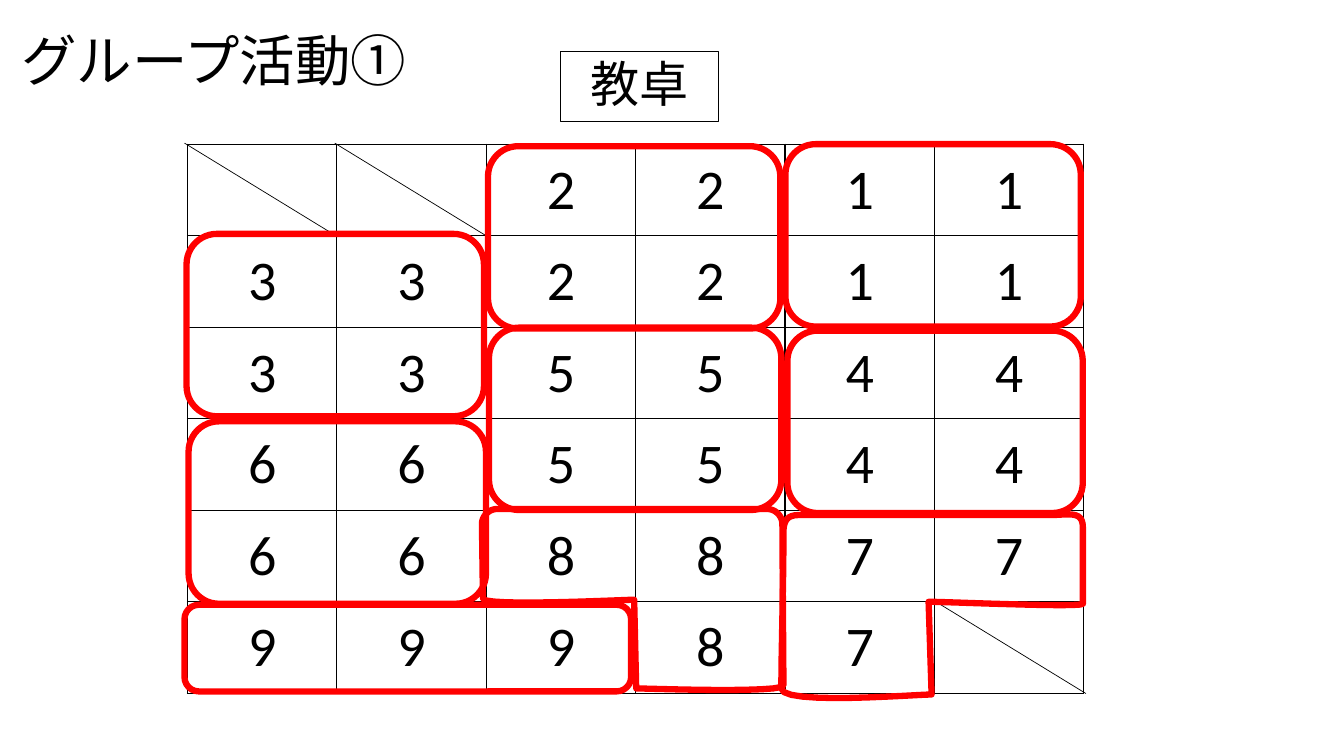
from dataclasses import dataclass

from lxml import etree
from pptx import Presentation
from pptx.dml.color import RGBColor
from pptx.enum.shapes import MSO_CONNECTOR, MSO_SHAPE
from pptx.enum.text import MSO_ANCHOR, MSO_AUTO_SIZE, PP_ALIGN
from pptx.oxml.ns import qn
from pptx.util import Inches, Pt

RECTANGLE = MSO_SHAPE.RECTANGLE
ROUNDED = MSO_SHAPE.ROUNDED_RECTANGLE
STRAIGHT = MSO_CONNECTOR.STRAIGHT
MIDDLE = MSO_ANCHOR.MIDDLE
LEFT, CENTER = PP_ALIGN.LEFT, PP_ALIGN.CENTER
FIXED_SIZE = MSO_AUTO_SIZE.NONE
TITLE_ONLY = 5


@dataclass(frozen=True)
class Theme:
    """Font, colours, type sizes and line widths of the seating plan."""
    font: str = "Calibri"
    ink: RGBColor = RGBColor(0, 0, 0)
    paper: RGBColor = RGBColor(255, 255, 255)
    group: RGBColor = RGBColor(255, 0, 0)
    title_size: float = 39.6
    desk_size: float = 35.1
    seat_size: float = 40
    grid_width: float = 1
    strike_width: float = 0.5
    desk_width: float = 0.75
    group_width: float = 4.5


THEME = Theme()

SEATS = ["  2211", "332211", "335544", "665544", "668877", "99987 "]
SEATS_BOX = (1.86, 1.43, 8.89, 5.45)
EMPTY_SEATS = [(1.83, 1.42), (3.32, 1.42), (9.25, 5.95)]
STRIKE_SPAN = (1.52, 0.93)

GROUP_BOXES = [
    (4.84, 1.45, 2.9, 1.81),
    (7.81, 3.28, 2.93, 1.81),
    (1.85, 2.32, 2.95, 1.81),
    (4.85, 3.25, 2.9, 1.81),
    (1.87, 4.18, 2.95, 1.81),
    (1.83, 6, 4.43, 0.86),
    (7.79, 1.43, 2.93, 1.81),
]
GROUP_7 = [
    (7.77, 5.41), (7.77, 5.24, 7.75, 5.11, 7.92, 5.11), (10.42, 5.11),
    (10.59, 5.11, 10.74, 5.06, 10.74, 5.23), (10.74, 5.99),
    (10.74, 6.03, 9.37, 5.97, 9.21, 5.97), (9.24, 6.89),
    (9.07, 6.89, 7.75, 7, 7.75, 6.83), (7.75, 6.43, 7.77, 5.8, 7.77, 5.41),
]
GROUP_8 = [
    (4.78, 5.2), (4.78, 5.12, 4.85, 5.05, 4.93, 5.05), (7.61, 5.05),
    (7.69, 5.05, 7.76, 5.12, 7.76, 5.2), (7.76, 5.41, 7.77, 6.6, 7.77, 6.8),
    (7.77, 6.88, 6.39, 6.83, 6.31, 6.83), (6.29, 5.95),
    (6.21, 5.95, 4.79, 6.02, 4.79, 5.94), (4.78, 5.2),
]
CURVE_STEPS = 12


def write(frame, text, size, align, spacing=None):
    """Put one formatted paragraph into a text frame."""
    frame.text = text
    paragraph = frame.paragraphs[0]
    paragraph.alignment = align
    paragraph.line_spacing = spacing
    paragraph.font.name = THEME.font
    paragraph.font.size = Pt(size)
    paragraph.font.color.rgb = THEME.ink


def set_line(line, color, width):
    """Give a line its colour and width."""
    line.color.rgb = color
    line.width = Pt(width)


def set_title(slide, text):
    """Place and format the slide title."""
    title = slide.shapes.title
    title.left, title.top, title.width, title.height = map(
        Inches, (0.11, 0.26, 4.91, 0.75))
    frame = title.text_frame
    frame.auto_size = FIXED_SIZE
    frame.vertical_anchor = MIDDLE
    write(frame, text, THEME.title_size, LEFT, 0.9)


def add_borders(cell):
    """Draw the four borders of a cell."""
    properties = cell._tc.get_or_add_tcPr()
    for position, side in enumerate(("a:lnL", "a:lnR", "a:lnT", "a:lnB")):
        border = etree.Element(qn(side), w=str(Pt(THEME.grid_width)))
        fill = etree.SubElement(border, qn("a:solidFill"))
        etree.SubElement(fill, qn("a:srgbClr"), val=str(THEME.ink))
        properties.insert(position, border)


def add_seats(slide):
    """Add the table of seats with their group numbers."""
    seats = slide.shapes.add_table(
        len(SEATS), len(SEATS[0]), *map(Inches, SEATS_BOX)).table
    seats.first_row = seats.horz_banding = False
    for row, groups in enumerate(SEATS):
        for column, group in enumerate(groups):
            cell = seats.cell(row, column)
            cell.fill.background()
            cell.vertical_anchor = MIDDLE
            add_borders(cell)
            if group.strip():
                write(cell.text_frame, group, THEME.seat_size, CENTER)


def add_strike(slide, left, top):
    """Cross out an empty seat with a diagonal."""
    width, height = STRIKE_SPAN
    strike = slide.shapes.add_connector(
        STRAIGHT, *map(Inches, (left, top, left + width, top + height)))
    set_line(strike.line, THEME.ink, THEME.strike_width)
    etree.SubElement(strike._element.spPr, qn("a:effectLst"))


def add_desk(slide, text):
    """Add the labelled teacher's desk."""
    desk = slide.shapes.add_shape(
        RECTANGLE, *map(Inches, (5.56, 0.51, 1.57, 0.7)))
    desk.shadow.inherit = False
    desk.fill.solid()
    desk.fill.fore_color.rgb = THEME.paper
    set_line(desk.line, THEME.ink, THEME.desk_width)
    desk.text_frame.vertical_anchor = MIDDLE
    write(desk.text_frame, text, THEME.desk_size, CENTER, 0.9)


def style_group(outline):
    """Make a shape an unfilled group outline."""
    outline.shadow.inherit = False
    outline.fill.background()
    set_line(outline.line, THEME.group, THEME.group_width)


def add_group_box(slide, box):
    """Ring a rectangular group of seats."""
    style_group(slide.shapes.add_shape(ROUNDED, *map(Inches, box)))


def curve_points(start, curve):
    """Return points along a cubic curve after its start."""
    controls = [start, curve[:2], curve[2:4], curve[4:]]
    points = []
    for step in range(1, CURVE_STEPS + 1):
        t = step / CURVE_STEPS
        weights = ((1 - t) ** 3, 3 * t * (1 - t) ** 2,
                   3 * t ** 2 * (1 - t), t ** 3)
        points.append(tuple(
            sum(weight * control[axis]
                for weight, control in zip(weights, controls))
            for axis in (0, 1)))
    return points


def add_group_path(slide, segments):
    """Ring an L-shaped group given line ends and curve controls."""
    points = [segments[0]]
    for segment in segments[1:]:
        if len(segment) == 2:
            points.append(segment)
        else:
            points.extend(curve_points(points[-1], segment))
    corners = [(Inches(x), Inches(y)) for x, y in points]
    builder = slide.shapes.build_freeform(*corners[0])
    builder.add_line_segments(corners[1:], close=True)
    style_group(builder.convert_to_shape())


def main():
    """Build and save the seating plan."""
    deck = Presentation()
    deck.slide_width, deck.slide_height = Inches(13.33), Inches(7.5)
    slide = deck.slides.add_slide(deck.slide_layouts[TITLE_ONLY])
    set_title(slide, "グループ活動①")
    add_seats(slide)
    for corner in EMPTY_SEATS:
        add_strike(slide, *corner)
    add_desk(slide, "教卓")
    for segments in (GROUP_7, GROUP_8):
        add_group_path(slide, segments)
    for box in GROUP_BOXES:
        add_group_box(slide, box)
    deck.save("out.pptx")


if __name__ == "__main__":
    main()
